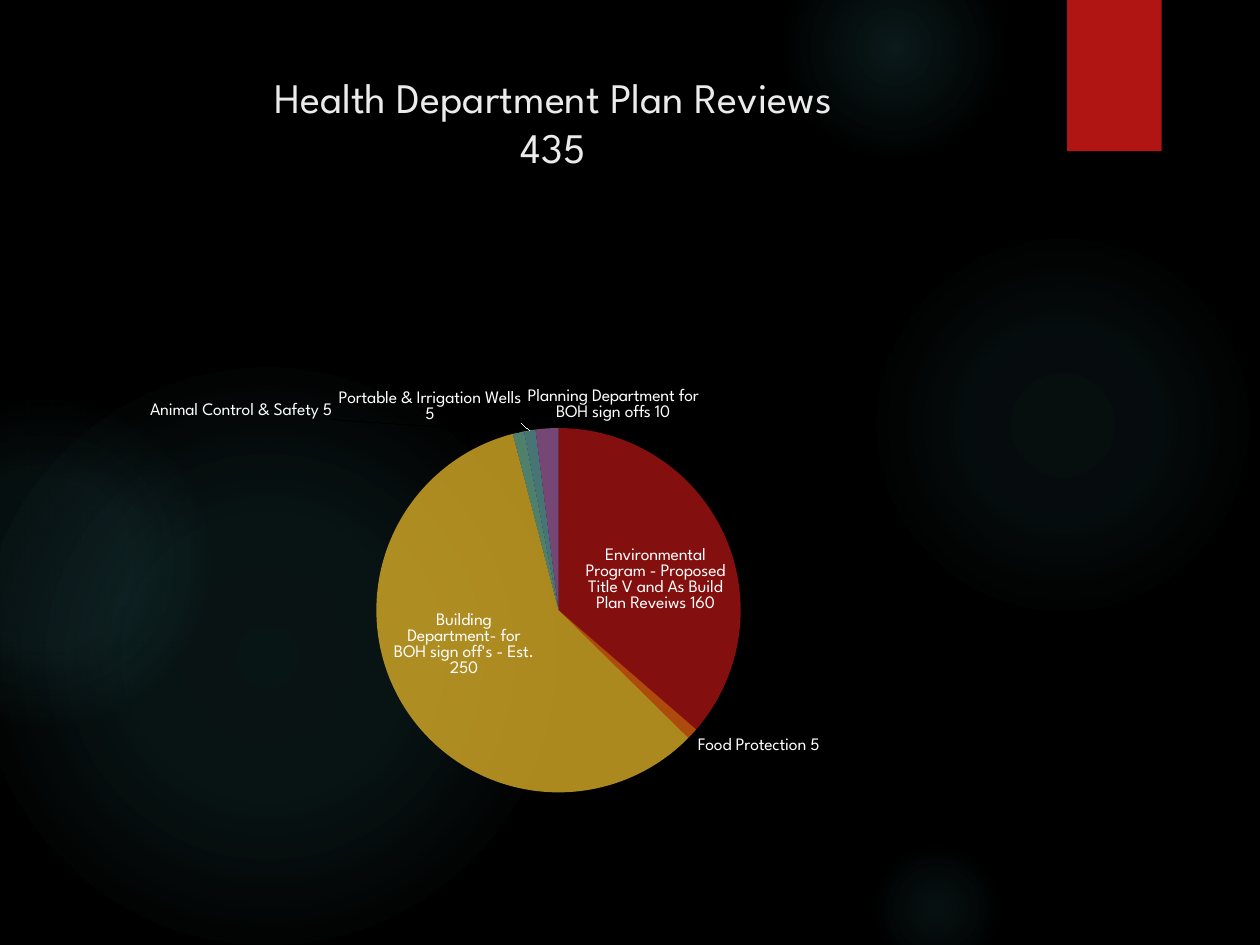
from pptx import Presentation
from pptx import util as u
from pptx.chart.data import CategoryChartData
from pptx.dml.color import RGBColor
from pptx.enum import chart as charts, shapes, text
from pptx.oxml import parse_xml
from pptx.oxml.ns import nsdecls, qn

COLORS = {"back": "000000", "glow": "50B9C1", "accent": "B01513",
          "title": "EBEBEB", "label": "FFFFFF"}
# left, top, diameter, then (stop, opacity) in percent
GLOWS = [
    (6.89, 1.83, 3.08, [(0, 7), (36, 6), (69, 0)]),
    (6.22, -0.5, 1.75, [(0, 14), (36, 7), (73, 0)]),
    (6.89, 6.67, 1.08, [(0, 9), (36, 5), (66, 0)]),
    (-0.17, 2.92, 4.58, [(0, 11), (36, 10), (75, 0)]),
    (-0.92, 3.17, 2.58, [(0, 8), (36, 8), (72, 0)]),
]
# category, value, slice colour
REVIEWS = [
    ("Environmental Program - Proposed Title V and As Build Plan Reveiws 160", 36, "B01513"),
    ("Food Protection 5", 1, "EA6312"),
    ("Building Department- for BOH sign off's - Est. 250", 58, "E6B729"),
    ("Animal Control & Safety 5", 1, "6AAC90"),
    ("Portable & Irrigation Wells 5", 1, "5F9C9D"),
    ("Planning Department for BOH sign offs 10", 2, "9E5E9B"),
]


def rgb(name):
    return RGBColor.from_string(COLORS.get(name, name))


def manual_layout(**values):
    """A c:layout element from its parts, given in schema order."""
    parts = "".join(f'<c:{key} val="{value}"/>' for key, value in values.items())
    return parse_xml(f'<c:layout {nsdecls("c")}><c:manualLayout>{parts}'
                     '</c:manualLayout></c:layout>')


class Page:
    def __init__(self, deck, font):
        self.font = font
        self.slide = deck.slides.add_slide(deck.slide_layouts[5])
        self.slide.background.fill.solid()
        self.slide.background.fill.fore_color.rgb = rgb("back")

    def shape(self, kind, *place):
        box = self.slide.shapes.add_shape(kind, *map(u.Inches, place))
        box.shadow.inherit = False
        box.line.fill.background()
        return box

    def glow(self, left, top, size, stops):
        """A circle whose colour fades out from its centre."""
        circle = self.shape(shapes.MSO_SHAPE.OVAL, left, top, size, size)
        marks = "".join(
            f'<a:gs pos="{stop * 1000}"><a:srgbClr val="{COLORS["glow"]}">'
            f'<a:alpha val="{alpha * 1000}"/></a:srgbClr></a:gs>' for stop, alpha in stops)
        circle._element.spPr.find(qn("a:prstGeom")).addnext(parse_xml(
            f'<a:gradFill {nsdecls("a")}><a:gsLst>{marks}</a:gsLst><a:path path="circle">'
            '<a:fillToRect l="50000" t="50000" r="50000" b="50000"/></a:path></a:gradFill>'))

    def tab(self, *place):
        box = self.shape(shapes.MSO_SHAPE.RECTANGLE, *place)
        box.fill.solid()
        box.fill.fore_color.rgb = rgb("accent")
        box._element.spPr.find(qn("a:effectLst")).append(parse_xml(
            f'<a:outerShdw {nsdecls("a")} blurRad="38100" dist="25400" dir="5400000">'
            '<a:srgbClr val="000000"><a:alpha val="45000"/></a:srgbClr></a:outerShdw>'))

    def title(self, words, size, *place):
        box = self.slide.shapes.title
        box.left, box.top, box.width, box.height = map(u.Inches, place)
        self.slide.shapes._spTree.append(box._element)
        frame = box.text_frame
        frame.text = words
        frame.word_wrap = True
        frame.vertical_anchor = text.MSO_ANCHOR.MIDDLE
        para = frame.paragraphs[0]
        para.alignment = text.PP_ALIGN.CENTER
        for span in para.runs:
            self.style(span.font, size, "title")

    def style(self, font, size, color):
        font.name, font.size = self.font, u.Pt(size)
        font.color.rgb = rgb(color)

    def pie(self, rows, plot_area, *place):
        data = CategoryChartData()
        data.categories = [row[0] for row in rows]
        data.add_series("Series 1", [row[1] for row in rows])
        chart = self.slide.shapes.add_chart(
            charts.XL_CHART_TYPE.PIE, *map(u.Inches, place), data).chart
        chart.has_legend = chart.has_title = False
        self.style(chart.font, 10, "label")
        left, top, width, height = plot_area
        area = chart._chartSpace.chart.plotArea
        for old in area.findall(qn("c:layout")):
            area.remove(old)
        area.insert(0, manual_layout(layoutTarget="inner", xMode="edge", yMode="edge",
                                     x=left, y=top, w=width, h=height))
        plot = chart.plots[0]
        plot.vary_by_categories = True
        for index, row in enumerate(rows):
            fill = plot.series[0].points[index].format.fill
            fill.solid()
            fill.fore_color.rgb = rgb(row[2])
            fill._xPr.find(".//" + qn("a:srgbClr")).append(
                parse_xml(f'<a:alpha {nsdecls("a")} val="75000"/>'))
        labels = plot.series[0].data_labels
        labels.show_category_name = True
        labels.show_value = labels.show_percentage = False
        labels.show_legend_key = False
        labels.position = charts.XL_LABEL_POSITION.BEST_FIT
        self.style(labels.font, 10, "label")
        return plot.series[0]

    def shift_label(self, series, index, across, down):
        """Moves one label by shares of the chart's size."""
        label = series.points[index].data_label
        label.position = charts.XL_LABEL_POSITION.BEST_FIT
        element = label._dLbl
        element.find(qn("c:idx")).addnext(manual_layout(x=across, y=down))
        for part in ("c:showVal", "c:showPercent", "c:showLegendKey"):
            element.find(qn(part)).set("val", "0")
        element.find(qn("c:showCatName")).set("val", "1")


def main():
    deck = Presentation()
    deck.slide_width, deck.slide_height = u.Inches(10), u.Inches(7.5)
    page = Page(deck, "League Spartan")
    for glow in GLOWS:
        page.glow(*glow)
    page.tab(8.47, 0, 0.75, 1.2)
    page.title("Health Department Plan Reviews\v435", 24, 0.53, 0.5, 7.72, 0.93)
    series = page.pie(REVIEWS, (0.05, 0.25, 0.86, 0.63), 0.91, 2.25, 7.34, 4.59)
    page.shift_label(series, 3, -0.2, -0.01)
    deck.save("out.pptx")


if __name__ == "__main__":
    main()
